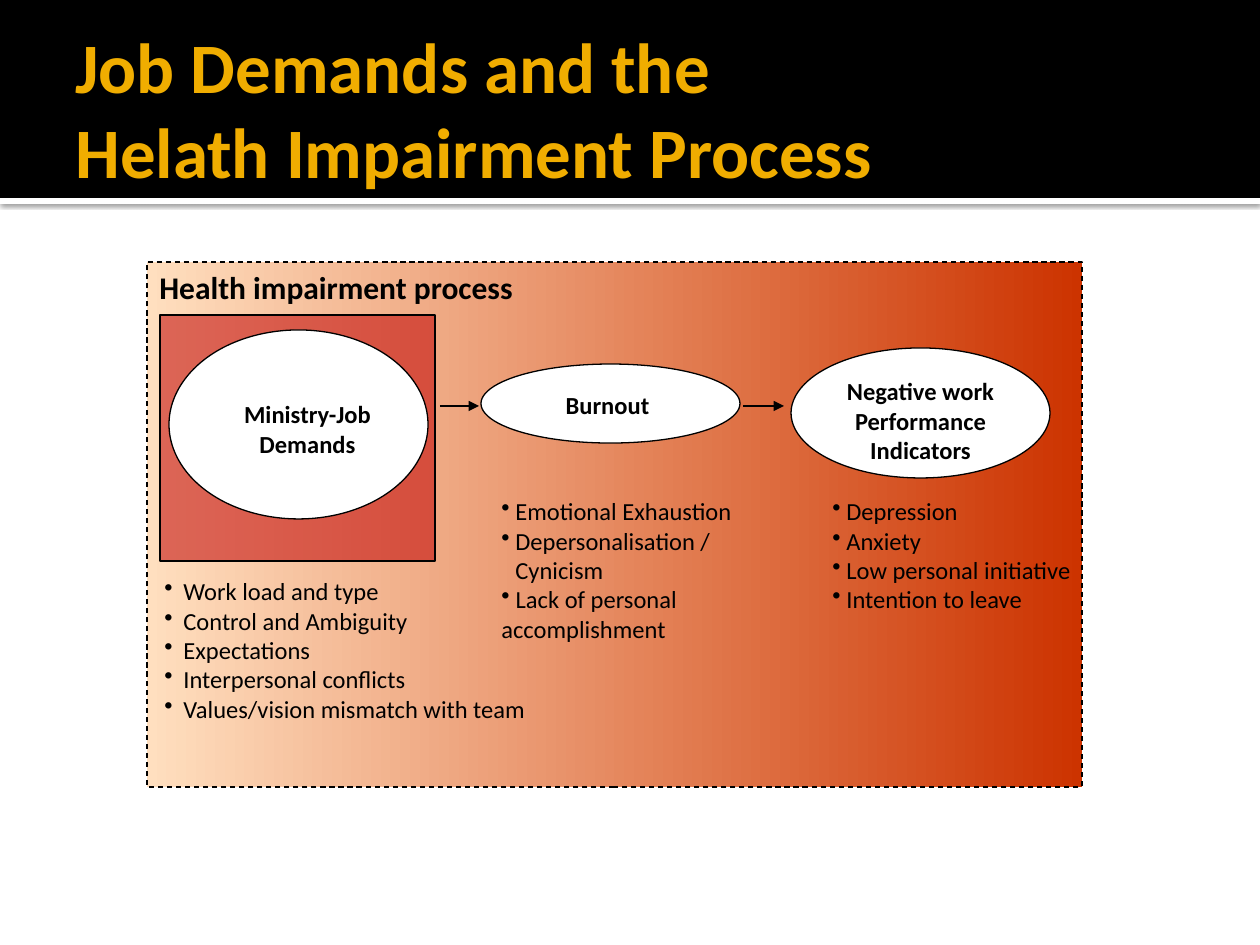
from pptx import Presentation
from pptx import util as u
from pptx.dml.color import RGBColor
from pptx.enum import dml, shapes, text
from pptx.oxml import parse_xml
from pptx.oxml.ns import nsdecls

BLACK = RGBColor(0x00, 0x00, 0x00)
WHITE = RGBColor(0xFF, 0xFF, 0xFF)
GOLD = RGBColor(0xF0, 0xAD, 0x00)
RED = RGBColor(0xC0, 0x00, 0x00)
PEACH = RGBColor(0xFF, 0xDF, 0xBF)
RUST = RGBColor(0xCC, 0x33, 0x00)

FONT = "Calibri"
PX = u.Inches(1) / 126
RECT, OVAL = shapes.MSO_SHAPE.RECTANGLE, shapes.MSO_SHAPE.OVAL

TITLE = "Job Demands and the\vHelath Impairment Process"
PANEL_TITLE = "Health impairment process"
LISTS = [
    ((152, 570, 499, 268), [
        ("Work load and type", 19),
        ("Control and Ambiguity", 19),
        ("Expectations", 19),
        ("Interpersonal conflicts", 19),
        ("Values/vision mismatch with team", 19),
    ]),
    ((489, 490, 261, 336), [
        ("Emotional Exhaustion", 14),
        ("Depersonalisation /\vCynicism", 14),
        (" Lack of personal accomplishment", 0),
    ]),
    ((820, 490, 272, 336), [
        ("Depression", 14),
        ("Anxiety", 14),
        ("Low personal initiative", 14),
        ("Intention to leave", 14),
    ]),
]
STAGES = [
    ((169, 330, 259, 189), "Ministry-Job Demands", (223, 393, 169, 42)),
    ((481, 364, 259, 79), "Burnout", (523, 384, 169, 31)),
    ((791, 348, 259, 130), "Negative work Performance Indicators", (824, 370, 193, 86)),
]
ARROWS = [(440, 479), (743, 784)]
ARROW_Y = 406


def emu(values):
    """Turn px lengths into EMU."""
    return [round(value * PX) for value in values]


def add_shape(page, kind, place, fill=None, outlined=False):
    """Add a preset shape without the theme's shadow."""
    shape = page.shapes.add_shape(kind, *emu(place))
    shape.shadow.inherit = False
    if fill is not None:
        shape.fill.solid()
        shape.fill.fore_color.rgb = fill
    if outlined:
        shape.line.color.rgb = BLACK
        shape.line.width = u.Pt(0.75)
    else:
        shape.line.fill.background()
    return shape


def add_box(page, place):
    """Add an empty text box."""
    return page.shapes.add_textbox(*emu(place))


def write(box, lines, size=14, color=BLACK, bold=False, align=text.PP_ALIGN.LEFT,
          anchor=text.MSO_ANCHOR.TOP, after=0):
    """Write one paragraph per line and return the paragraphs."""
    frame = box.text_frame
    frame.word_wrap = True
    frame.vertical_anchor = anchor
    frame.text = "\n".join(lines)
    for para in frame.paragraphs:
        para.alignment = align
        para.space_after = u.Pt(after)
        for span in para.runs:
            span.font.name = FONT
            span.font.size = u.Pt(size)
            span.font.bold = bold
            span.font.color.rgb = color
    return frame.paragraphs


def add_list(page, place, items):
    """Add a bulleted list with a hanging indent for each item."""
    paragraphs = write(add_box(page, place), [line for line, hang in items])
    for para, (line, hang) in zip(paragraphs, items):
        props = para._p.get_or_add_pPr()
        props.set("marL", str(round(hang * PX)))
        props.set("indent", str(round(-hang * PX)))
        props.append(parse_xml(f'<a:buChar {nsdecls("a")} char="•"/>'))


def add_arrow(page, start, end):
    """Add a horizontal arrow between two x positions."""
    arrow = page.shapes.add_connector(
        shapes.MSO_CONNECTOR.STRAIGHT, *emu((start, ARROW_Y, end, ARROW_Y)))
    arrow.line.color.rgb = BLACK
    arrow.line.width = u.Pt(1.5)
    arrow.line._get_or_add_ln().append(
        parse_xml(f'<a:tailEnd {nsdecls("a")} type="triangle"/>'))
    arrow._element.spPr.append(parse_xml(f'<a:effectLst {nsdecls("a")}/>'))


def add_header(page):
    """Add the black header, its shadowed rule and the title."""
    rule = add_shape(page, RECT, (0, 198, 1260, 6), WHITE)
    rule._element.spPr.xpath("a:effectLst")[0].append(parse_xml(
        f'<a:outerShdw {nsdecls("a")} blurRad="{u.Pt(2.5)}" dist="{u.Pt(0.8)}" dir="5400000">'
        '<a:srgbClr val="000000"><a:alpha val="60000"/></a:srgbClr></a:outerShdw>'))
    add_shape(page, RECT, (0, 0, 1260, 198), BLACK)
    title = add_box(page, (63, 21, 1134, 173))
    write(title, [TITLE], size=40.5, color=GOLD, bold=True, anchor=text.MSO_ANCHOR.MIDDLE)


def add_panel(page):
    """Add the dashed gradient panel with its heading."""
    panel = add_shape(page, RECT, (147, 262, 935, 525), outlined=True)
    panel.line.dash_style = dml.MSO_LINE.DASH
    panel.fill.gradient()
    panel.fill.gradient_angle = 0
    for stop, color, position in zip(panel.fill.gradient_stops, (PEACH, RUST), (0, 1)):
        stop.color.rgb = color
        stop.position = position
    write(panel, [PANEL_TITLE], size=18, bold=True, after=10)


def main():
    """Build the slide and save it."""
    deck = Presentation()
    deck.slide_width, deck.slide_height = emu((1260, 945))
    page = deck.slides.add_slide(deck.slide_layouts[6])
    add_header(page)
    add_panel(page)
    for place, items in LISTS:
        add_list(page, place, items)
    backing = add_shape(page, RECT, (160, 315, 275, 246), RED, outlined=True)
    backing._element.spPr.xpath("a:solidFill/a:srgbClr")[0].append(
        parse_xml(f'<a:alpha {nsdecls("a")} val="54000"/>'))
    for oval, label, place in STAGES:
        add_shape(page, OVAL, oval, WHITE, outlined=True)
        write(add_box(page, place), [label], bold=True,
              align=text.PP_ALIGN.CENTER, after=10)
    for start, end in ARROWS:
        add_arrow(page, start, end)
    deck.save("out.pptx")


if __name__ == "__main__":
    main()
